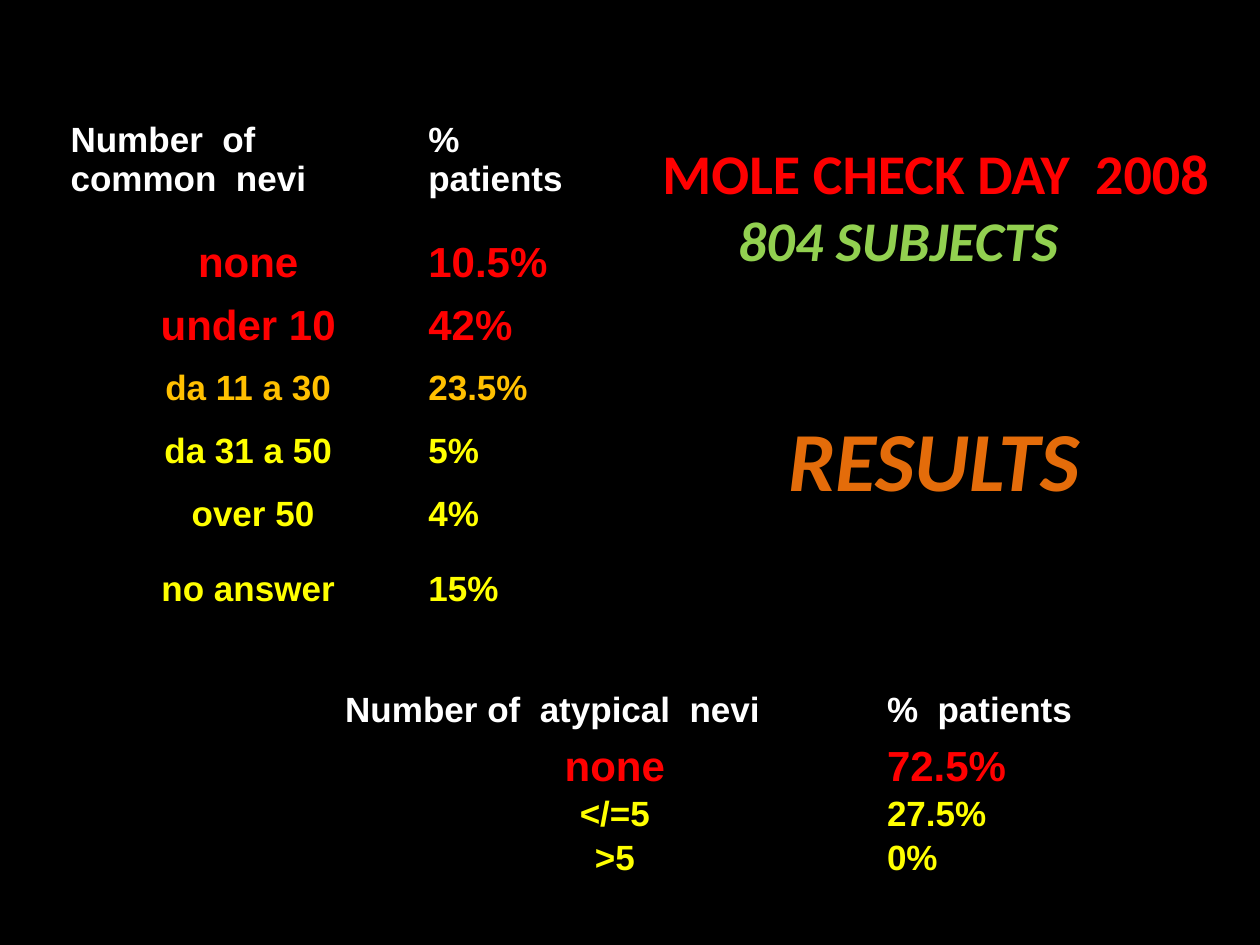
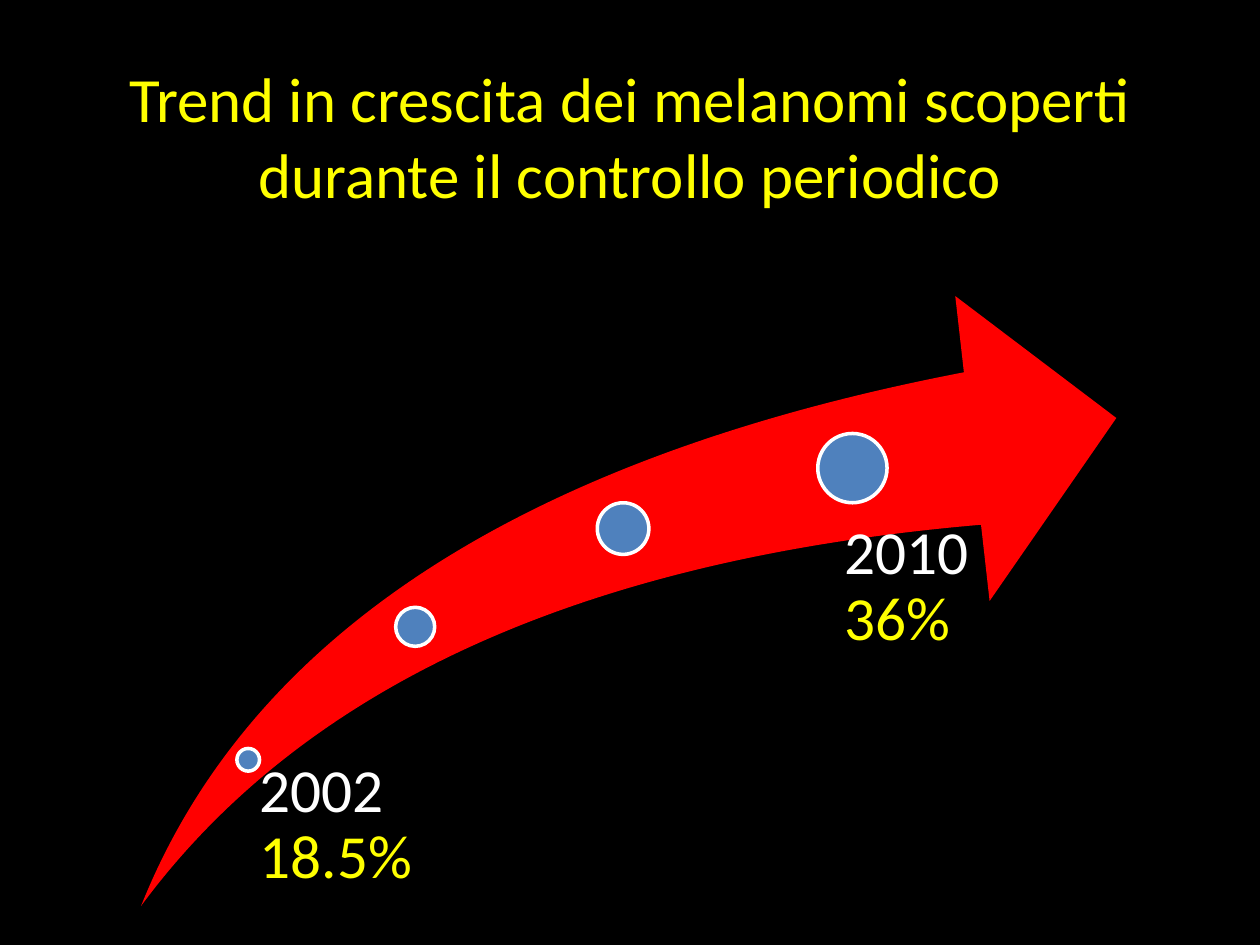
from lxml import etree
from pptx import Presentation
from pptx.dml.color import RGBColor
from pptx.enum import shapes, text
from pptx.oxml import ns
from pptx.util import Inches, Pt

BLACK, WHITE, RED, YELLOW = "000000", "FFFFFF", "FF0000", "FFFF00"
GOLD, GREEN, ORANGE, BLUE = "FFC000", "92D050", "E46C0A", "4F81BD"
LEFT, MID = text.PP_ALIGN.LEFT, text.PP_ALIGN.CENTER
CENTRE, BASE = text.MSO_ANCHOR.MIDDLE, text.MSO_ANCHOR.BOTTOM


def tint(code):
    return RGBColor.from_string(code)


class Deck:
    def __init__(self):
        self.show = Presentation()
        self.show.slide_width = Inches(10)
        self.show.slide_height = Inches(7.5)

    def page(self):
        self.slide = self.show.slides.add_slide(self.show.slide_layouts[6])
        fill = self.slide.background.fill
        fill.solid()
        fill.fore_color.rgb = tint(BLACK)

    def style(self, para, size, color, face="Calibri", bold=False, slant=False, align=LEFT):
        font = para.font
        font.name, font.size = face, Pt(size)
        font.bold, font.italic = bold, slant
        font.color.rgb = tint(color)
        para.alignment = align

    def box(self, place, left=0.1, top=0.05, right=0.1, base=0.05):
        frame = self.slide.shapes.add_textbox(*map(Inches, place)).text_frame
        frame.word_wrap = True
        frame.margin_left, frame.margin_top = Inches(left), Inches(top)
        frame.margin_right, frame.margin_bottom = Inches(right), Inches(base)
        return frame

    def shape(self, kind, place, fill, line=None):
        item = self.slide.shapes.add_shape(kind, *map(Inches, place))
        item.shadow.inherit = False
        item.fill.solid()
        item.fill.fore_color.rgb = tint(fill)
        if line:
            item.line.color.rgb = tint(line)
            item.line.width = Pt(2)
        else:
            item.line.fill.background()
        return item

    def edge(self, cell):
        props = cell._tc.get_or_add_tcPr()
        for spot, side in enumerate(("lnL", "lnR", "lnT", "lnB")):
            line = etree.Element(ns.qn("a:" + side), w=str(Pt(0.5)))
            fill = etree.SubElement(line, ns.qn("a:solidFill"))
            etree.SubElement(fill, ns.qn("a:srgbClr"), val=BLACK)
            props.insert(spot, line)

    def table(self, left, top, cols, rows, data):
        frame = self.slide.shapes.add_table(
            len(rows), len(cols), Inches(left), Inches(top),
            Inches(sum(cols)), Inches(sum(rows)))
        grid = frame.table
        grid.first_row = grid.horz_banding = False
        for col, width in zip(grid.columns, cols):
            col.width = Inches(width)
        for y, (high, (words, size, color, anchor)) in enumerate(zip(rows, data)):
            grid.rows[y].height = Inches(high)
            for x, word in enumerate(words):
                cell = grid.cell(y, x)
                cell.fill.background()
                self.edge(cell)
                cell.margin_left = cell.margin_right = cell.margin_top = Inches(0.01)
                cell.margin_bottom = 0
                cell.vertical_anchor = anchor
                cell.text_frame.text = word
                align = MID if y and not x else LEFT
                for para in cell.text_frame.paragraphs:
                    self.style(para, size, color, "Arial", True, align=align)

    def label(self, place, left, year, share):
        para = self.box(place, left, 0, 0, 0).paragraphs[0]
        self.style(para, 35, WHITE)
        para.line_spacing = 0.9
        para.add_run().text = year
        run = para.add_run()
        run.text = " " + share
        run.font.color.rgb = tint(YELLOW)


def results(deck):
    deck.page()
    deck.table(0.55, 0.7, [2.84, 2.24], [1.13] + [0.5] * 6, [
        (("Number  of\ncommon  nevi", "%\npatients"), 20, WHITE, CENTRE),
        (("none", "10.5%"), 24, RED, CENTRE),
        (("under 10", "42%"), 24, RED, CENTRE),
        (("da 11 a 30", "23.5%"), 20, GOLD, CENTRE),
        (("da 31 a 50", "5%"), 20, YELLOW, CENTRE),
        ((" over 50", "4%"), 20, YELLOW, CENTRE),
        (("no answer", "15%"), 20, YELLOW, BASE),
    ])
    deck.table(2.73, 5.39, [4.3, 2.19], [0.49, 0.4, 0.35, 0.35], [
        (("Number of  atypical  nevi", "%  patients"), 20, WHITE, CENTRE),
        (("none", "72.5%"), 24, RED, CENTRE),
        (("</=5", "27.5%"), 20, YELLOW, CENTRE),
        ((">5", "0%"), 20, YELLOW, CENTRE),
    ])
    frame = deck.box((5.16, 1.05, 5.36, 3.06))
    frame.text = "MOLE CHECK DAY  2008\n804 SUBJECTS\nRESULTS"
    looks = [(32, RED, False, 0, 0), (32, GREEN, True, 0.6, 0), (48, ORANGE, True, 1, 77)]
    for para, (size, color, slant, indent, gap) in zip(frame.paragraphs, looks):
        deck.style(para, size, color, bold=True, slant=slant)
        para.space_before = Pt(gap)
        para._p.get_or_add_pPr().set("marL", str(Inches(indent)))


def trend(deck):
    deck.page()
    frame = deck.box((0.5, 0.45, 9, 1.25))
    frame.vertical_anchor = CENTRE
    frame.text = "Trend in crescita dei melanomi scoperti durante il controllo periodico"
    deck.style(frame.paragraphs[0], 36, YELLOW, align=MID)
    kind = shapes.MSO_SHAPE
    arrow = deck.shape(kind.SWOOSH_ARROW, (1.12, 2.35, 7.74, 4.84), RED)
    arrow.adjustments[0] = arrow.adjustments[1] = 0.25
    for x, y, size in [(1.88, 5.94, 0.18), (3.14, 4.82, 0.31),
                       (4.74, 3.99, 0.41), (6.49, 3.44, 0.55)]:
        deck.shape(kind.OVAL, (x, y, size, size), BLUE, WHITE)
    deck.label((1.97, 6.03, 1.32, 1.15), 0.09, "2002", "18.5%")
    deck.label((6.41, 4.14, 1.63, 3.47), 0.29, "2010", "36%")


def main():
    deck = Deck()
    results(deck)
    trend(deck)
    deck.show.save("out.pptx")


if __name__ == "__main__":
    main()
